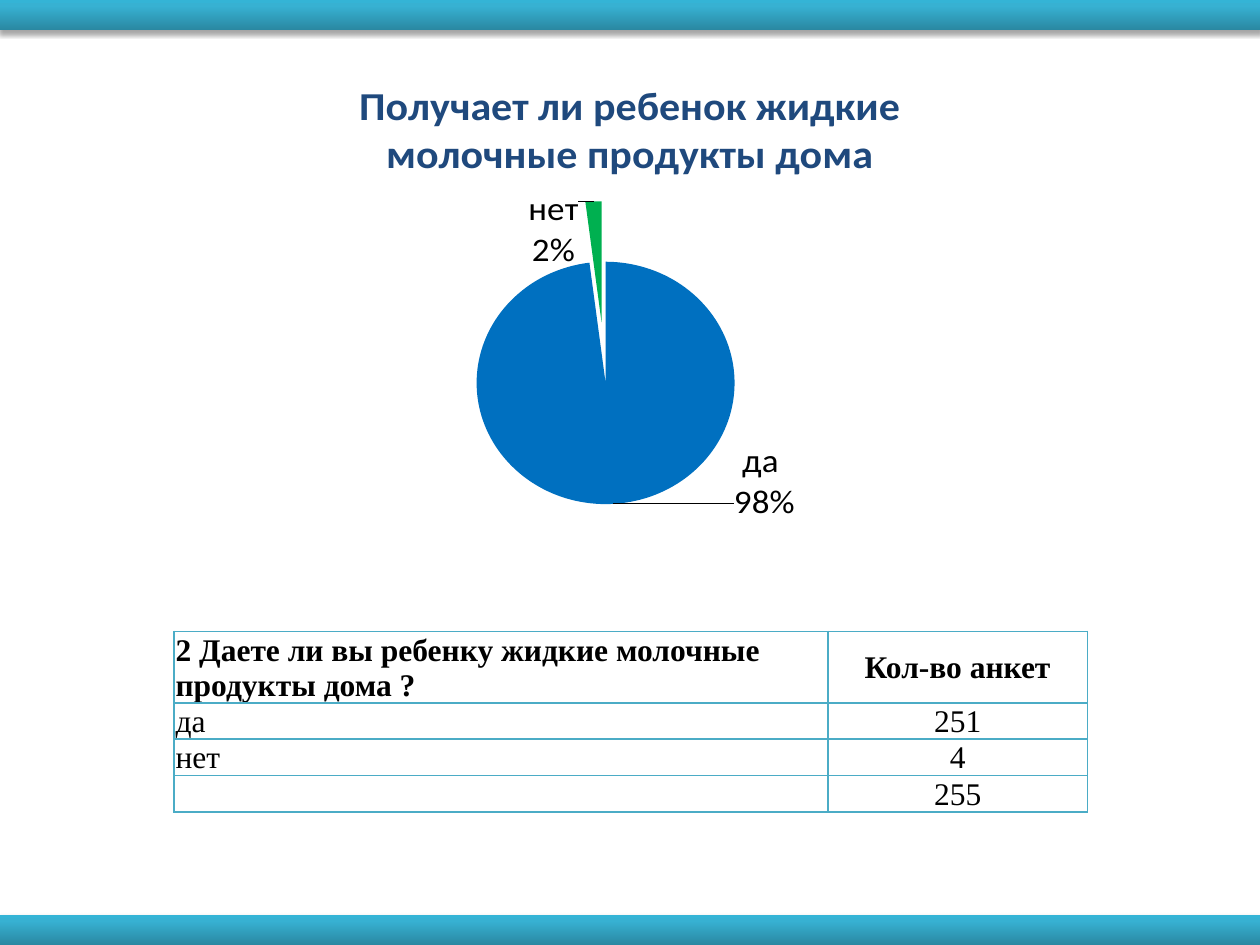
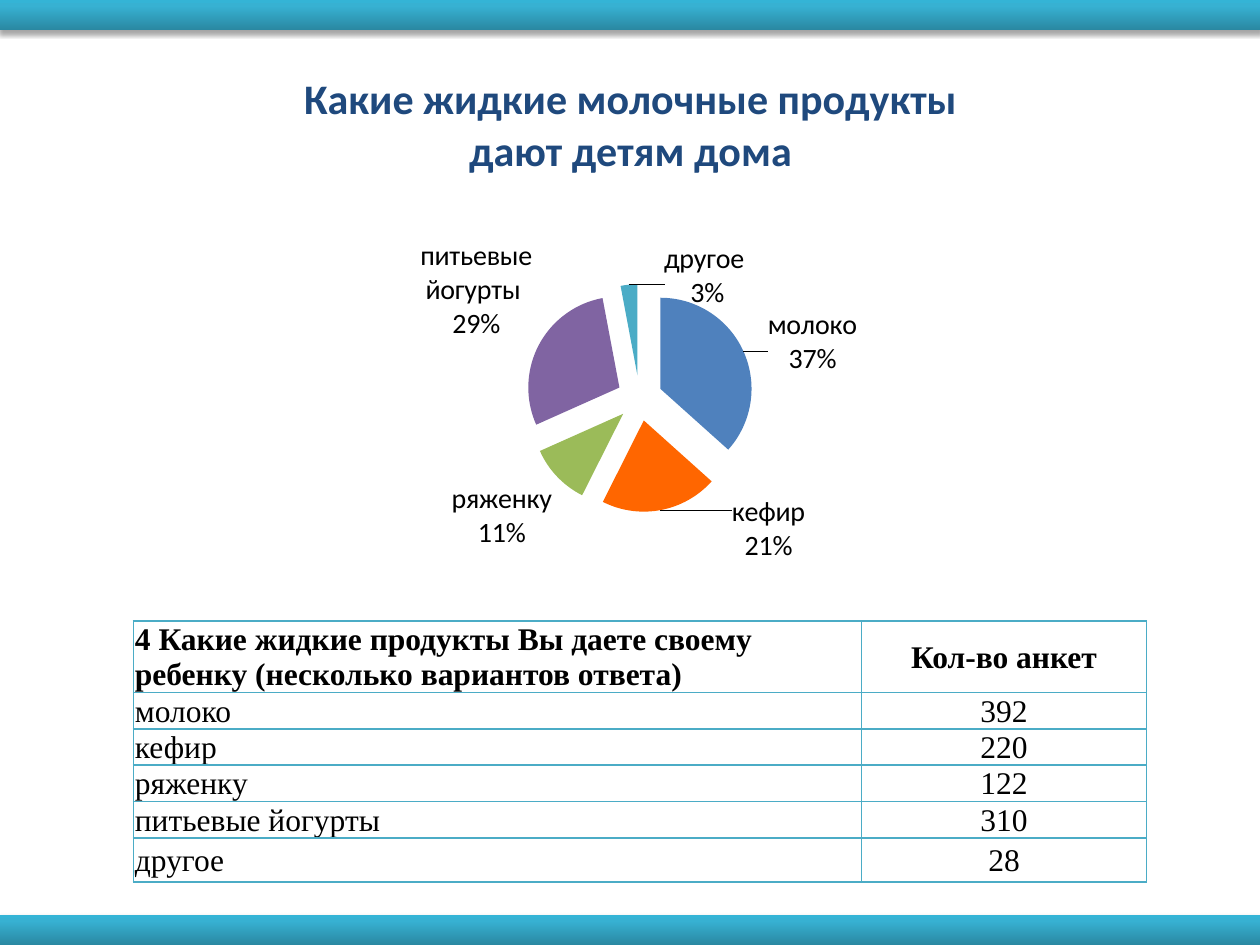
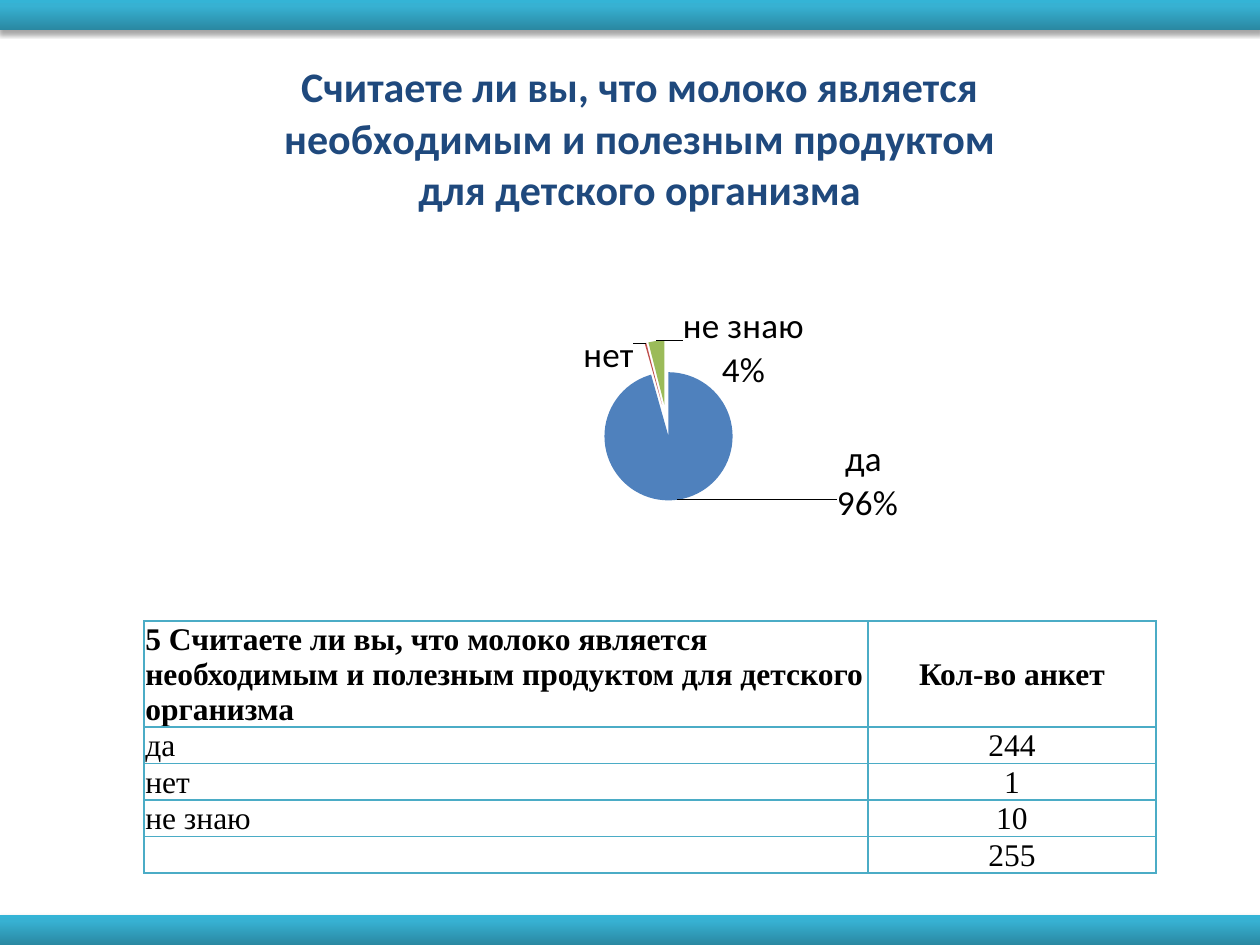
from copy import deepcopy
from dataclasses import dataclass

from pptx import Presentation
from pptx import util as u
from pptx.chart import data as cd
from pptx.dml.color import RGBColor
from pptx.enum import chart as ch, shapes, text
from pptx.oxml import ns, parse_xml

Cm, Pt = u.Cm, u.Pt
NS = ns.nsdecls("a", "c")


@dataclass(frozen=True)
class Theme:
    wide: float = 25.4
    high: float = 19.05
    band: float = 0.6
    stops: tuple = ((0, "2A88A2"), (80, "37B1D2"), (100, "34B4D6"))
    ink: str = "000000"
    head: str = "1F497D"
    rule: str = "4BACC6"
    sans: str = "Calibri"
    serif: str = "Times New Roman"
    title: int = 24
    cell: int = 18


class Deck:
    """Holds the theme and the current slide."""

    def __init__(self, theme):
        self.th = theme
        self.prs = Presentation()
        self.prs.slide_width = Cm(theme.wide)
        self.prs.slide_height = Cm(theme.high)

    def page(self):
        self.slide = self.prs.slides.add_slide(self.prs.slide_layouts[6])
        self.band(self.th.high - self.th.band)
        self.band(0)

    def font(self, font, size, color, face, bold=False):
        font.size, font.name, font.bold = Pt(size), face, bold
        font.color.rgb = RGBColor.from_string(color)

    # Gradient band with a soft shadow
    def band(self, top):
        th = self.th
        bar = self.slide.shapes.add_shape(
            shapes.MSO_SHAPE.RECTANGLE, 0, Cm(top), Cm(th.wide), Cm(th.band))
        bar.line.fill.background()
        bar.fill.background()
        stops = "".join(
            f'<a:gs pos="{pos * 1000}"><a:srgbClr val="{color}"/></a:gs>'
            for pos, color in th.stops)
        grad = parse_xml(
            f'<a:gradFill {NS} rotWithShape="1"><a:gsLst>{stops}</a:gsLst>'
            '<a:lin ang="16200000" scaled="0"/></a:gradFill>')
        props = bar._element.spPr
        props.replace(props.find(ns.qn("a:noFill")), grad)
        props.append(parse_xml(
            f'<a:effectLst {NS}><a:outerShdw blurRad="{Pt(3.1)}" dist="{Pt(1.8)}" '
            'dir="5400000" rotWithShape="0"><a:srgbClr val="000000">'
            '<a:alpha val="35000"/></a:srgbClr></a:outerShdw></a:effectLst>'))

    # Answer table: question and number of forms
    def table(self, left, top, cols, rows, highs):
        grid = self.slide.shapes.add_table(
            len(rows), len(cols), Cm(left), Cm(top),
            Cm(sum(cols)), Cm(sum(highs))).table
        grid.first_row = grid.horz_banding = False
        for col, wide in zip(grid.columns, cols):
            col.width = Cm(wide)
        for r, (row, high) in enumerate(zip(rows, highs)):
            grid.rows[r].height = Cm(high)
            for c, words in enumerate(row):
                self.cell(grid.cell(r, c), words, r == 0, c == 1)

    def cell(self, cell, words, bold, center):
        th = self.th
        cell.margin_left = cell.margin_right = cell.margin_top = Cm(0.03)
        cell.margin_bottom = 0
        cell.vertical_anchor = text.MSO_ANCHOR.MIDDLE
        cell.text = words
        para = cell.text_frame.paragraphs[0]
        if center:
            para.alignment = text.PP_ALIGN.CENTER
        for run in para.runs:
            self.font(run.font, th.cell, th.ink, th.serif, bold)
        if not words:
            para._p.append(parse_xml(
                f'<a:endParaRPr {NS} sz="{th.cell * 100}">'
                f'<a:latin typeface="{th.serif}"/></a:endParaRPr>'))
        props = cell._tc.get_or_add_tcPr()
        for side in "LRTB":
            props.append(parse_xml(
                f'<a:ln{side} {NS} w="{Pt(1)}"><a:solidFill>'
                f'<a:srgbClr val="{th.rule}"/></a:solidFill></a:ln{side}>'))
        cell.fill.background()

    # Exploded pie; pie gives its centre and width on the slide
    def pie(self, box, title, parts, colors, pie, size, moves, plain=()):
        th = self.th
        data = cd.CategoryChartData()
        data.categories = [name for name, _ in parts]
        data.add_series("Series 1", [val for _, val in parts])
        chart = self.slide.shapes.add_chart(
            ch.XL_CHART_TYPE.PIE, *map(Cm, box), data).chart
        self.font(chart.font, 10, th.ink, th.sans)
        chart.has_legend = False
        chart.has_title = True
        frame = chart.chart_title.text_frame
        frame.text = title
        self.font(frame.paragraphs[0].runs[0].font, th.title, th.head, th.sans, True)
        chart.chart_title.include_in_layout = False
        plot = chart.plots[0]
        plot.vary_by_categories = True
        ser = plot.series[0]
        for i, color in enumerate(colors):
            fill = ser.points[i].format.fill
            fill.solid()
            fill.fore_color.rgb = RGBColor.from_string(color)
        ser._element.find(ns.qn("c:dPt")).addprevious(
            parse_xml(f'<c:explosion {NS} val="25"/>'))
        self.place(chart, box, pie)
        self.labels(ser, parts, size, moves, plain)

    def place(self, chart, box, pie):
        left, top, wide, high = box
        mid_x, mid_y, size = pie
        vals = {"x": (mid_x - size / 2 - left) / wide,
                "y": (mid_y - size / 2 - top) / high,
                "w": size / wide, "h": size / high}
        inner = "".join(f'<c:{k} val="{v:.3f}"/>' for k, v in vals.items())
        area = chart._chartSpace.find(".//" + ns.qn("c:plotArea"))
        for old in area.findall(ns.qn("c:layout")):
            area.remove(old)
        area.insert(0, parse_xml(
            f'<c:layout {NS}><c:manualLayout><c:layoutTarget val="inner"/>'
            '<c:xMode val="edge"/><c:yMode val="edge"/>'
            f'{inner}</c:manualLayout></c:layout>'))

    # Labels outside the slices; moves shifts some by shares of the chart
    def labels(self, ser, parts, size, moves, plain):
        th = self.th
        labs = ser.data_labels
        self.font(labs.font, size, th.ink, th.sans)
        labs.number_format, labs.number_format_is_linked = "0%", False
        labs.position = ch.XL_LABEL_POSITION.OUTSIDE_END
        labs.show_value = False
        labs.show_category_name = labs.show_percentage = True
        root = labs._element
        root.find(ns.qn("c:showBubbleSize")).addnext(
            parse_xml(f"<c:separator {NS}>\n</c:separator>"))
        base = [deepcopy(kid) for kid in root
                if kid.tag != ns.qn("c:showLeaderLines")]
        for spot, (i, (x, y)) in enumerate(sorted(moves.items())):
            lab = parse_xml(
                f'<c:dLbl {NS}><c:idx val="{i}"/><c:layout><c:manualLayout>'
                f'<c:x val="{x}"/><c:y val="{y}"/></c:manualLayout></c:layout></c:dLbl>')
            if i in plain:
                lab.append(parse_xml(
                    f'<c:tx {NS}><c:rich><a:bodyPr/><a:p><a:r><a:rPr sz="{size * 100}">'
                    f'<a:latin typeface="{th.sans}"/></a:rPr>'
                    f'<a:t>{parts[i][0]}</a:t></a:r></a:p></c:rich></c:tx>'))
            for kid in base:
                lab.append(deepcopy(kid))
            root.insert(spot, lab)


def main():
    deck = Deck(Theme())
    count = "Кол-во анкет"
    line = 0.72
    blue, red, green = "4F81BD", "C0504D", "9BBB59"

    # Milk at home
    deck.page()
    deck.table(3.51, 12.73, (13.18, 5.23), [
        ("2 Даете ли вы ребенку жидкие молочные продукты дома ?", count),
        ("да", "251"), ("нет", "4"), ("", "255")], [1.4] + [line] * 3)
    deck.pie((4.72, 1.12, 15.95, 10.82),
             "Получает ли ребенок жидкие молочные продукты дома",
             [("да ", 98), ("нет", 2)], ("0070C0", "00B050"),
             (12.17, 7.5, 6.5), 20, {0: (0.19, -0.14), 1: (-0.05, 0.15)})

    # Kinds of drinks
    deck.page()
    deck.table(2.69, 12.52, (14.68, 5.74), [
        ("4 Какие жидкие продукты Вы даете своему ребенку "
         "(несколько вариантов ответа)", count),
        ("молоко", "392"), ("кефир", "220"), ("ряженку", "122"),
        ("питьевые йогурты", "310"), ("другое", "28")],
        [1.4] + [line] * 4 + [0.89])
    deck.pie((3.91, 0.91, 17.6, 11.2),
             "Какие жидкие молочные продукты дают детям дома",
             [("молоко", 37), ("кефир", 21), ("ряженку", 11),
              ("питьевые йогурты ", 29), ("другое ", 3)],
             (blue, "FF6600", green, "8064A2", "4BACC6"),
             (12.9, 8.03, 4.6), 16,
             {0: (0.02, 0.05), 1: (0.08, -0.04), 4: (0.14, 0.06)})

    # Is milk needed
    deck.page()
    deck.table(2.9, 12.52, (14.6, 5.8), [
        ("5 Считаете ли вы, что молоко является необходимым и полезным "
         "продуктом для детского организма", count),
        ("да", "244"), ("нет", "1"), ("не знаю", "10"), ("", "255")],
        [2.12] + [line] * 4)
    deck.pie((2.9, 0.66, 19.99, 11.66),
             "Считаете ли вы, что молоко является необходимым и полезным "
             "продуктом для детского организма",
             [("да ", 96), ("нет", 0.4), ("не знаю", 4)], (blue, red, green),
             (13.44, 8.48, 3.23), 20,
             {0: (0.16, -0.12), 1: (-0.01, 0.07), 2: (0.15, 0.1)}, plain=(1,))

    deck.prs.save("out.pptx")


if __name__ == "__main__":
    main()
